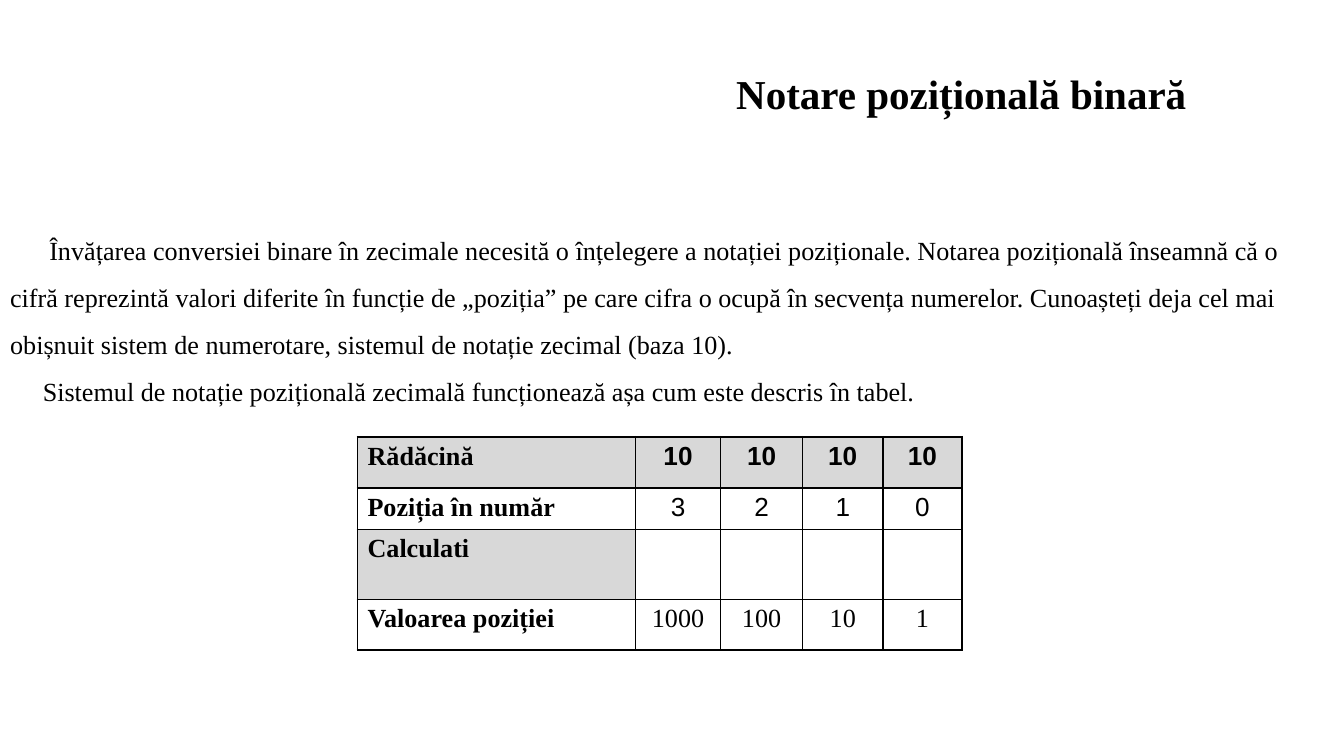
from dataclasses import dataclass

from lxml import etree
from pptx import Presentation
from pptx import util as u
from pptx.dml.color import RGBColor
from pptx.enum import text
from pptx.oxml.ns import qn


@dataclass(frozen=True)
class Theme:
    ink: str = "000000"
    shade: str = "D8D8D8"
    serif: str = "Times New Roman"
    sans: str = "Arial"
    title_size: float = 22
    body_size: float = 14
    border: float = 1
    margin_x: float = 5.4
    margin_y: float = 2.7


class SlideBuilder:
    def __init__(self, slide, theme):
        self.slide = slide
        self.theme = theme

    def set_margins(self, holder):
        holder.margin_left = holder.margin_right = u.Pt(self.theme.margin_x)
        holder.margin_top = holder.margin_bottom = u.Pt(self.theme.margin_y)

    def style_font(self, font, size, name, bold):
        font.size, font.name, font.bold = u.Pt(size), name, bold
        font.color.rgb = RGBColor.from_string(self.theme.ink)

    def add_words(self, paragraph, words, size, name, bold=False):
        run = paragraph.add_run()
        run.text = words
        self.style_font(run.font, size, name, bold)

    def text_frame(self, left, top, width, height):
        box = self.slide.shapes.add_textbox(*map(u.Pt, (left, top, width, height)))
        frame = box.text_frame
        frame.word_wrap = True
        self.set_margins(frame)
        return frame

    def title(self, words, *box):
        frame = self.text_frame(*box)
        frame.vertical_anchor = text.MSO_ANCHOR.MIDDLE
        paragraph = frame.paragraphs[0]
        paragraph.alignment = text.PP_ALIGN.CENTER
        self.add_words(paragraph, words, self.theme.title_size, self.theme.serif, True)

    def body(self, passages, *box):
        frame = self.text_frame(*box)
        for index, (indent, words) in enumerate(passages):
            paragraph = frame.add_paragraph() if index else frame.paragraphs[0]
            paragraph.line_spacing = 1.5
            paragraph._p.get_or_add_pPr().set("indent", str(u.Pt(indent)))
            self.add_words(paragraph, words, self.theme.body_size, self.theme.serif)

    def cell_borders(self, cell):
        properties = cell._tc.get_or_add_tcPr()
        for side in ("lnL", "lnR", "lnT", "lnB"):
            line = etree.SubElement(properties, qn(f"a:{side}"), w=str(u.Pt(self.theme.border)))
            fill = etree.SubElement(line, qn("a:solidFill"))
            etree.SubElement(fill, qn("a:srgbClr"), val=self.theme.ink)

    def cell(self, cell, words, font_name, bold, shaded, centred):
        self.set_margins(cell)
        self.cell_borders(cell)
        if shaded:
            cell.fill.solid()
            cell.fill.fore_color.rgb = RGBColor.from_string(self.theme.shade)
        else:
            cell.fill.background()
        paragraph = cell.text_frame.paragraphs[0]
        if centred:
            paragraph.alignment = text.PP_ALIGN.CENTER
        if words:
            self.add_words(paragraph, words, self.theme.body_size, font_name, bold)
        else:
            self.style_font(paragraph.font, self.theme.body_size, font_name, bold)

    def table(self, rows, left, top, widths, heights):
        size = (left, top, sum(widths), sum(heights))
        table = self.slide.shapes.add_table(len(rows), len(widths), *map(u.Pt, size)).table
        table.first_row = table.horz_banding = False
        for column, width in zip(table.columns, widths):
            column.width = u.Pt(width)
        for row, height in zip(table.rows, heights):
            row.height = u.Pt(height)
        for r, (label, values, value_font) in enumerate(rows):
            for c, words in enumerate((label, *values)):
                is_label = c == 0
                self.cell(
                    table.cell(r, c), words,
                    font_name=self.theme.serif if is_label else value_font,
                    bold=is_label or r == 0,
                    shaded=r == 0 or (is_label and r == 2),
                    centred=not is_label,
                )


def main():
    presentation = Presentation()
    presentation.slide_width, presentation.slide_height = u.Pt(720), u.Pt(405)
    theme = Theme()
    builder = SlideBuilder(presentation.slides.add_slide(presentation.slide_layouts[6]), theme)

    # Heading
    builder.title("Notare pozițională binară", 389, 34.5, 252, 31)

    # Explanation: first-line indent and wording of each paragraph
    builder.body([
        (21, "Învățarea conversiei binare în zecimale necesită o înțelegere a notației "
             "poziționale. Notarea pozițională înseamnă că o cifră reprezintă valori diferite "
             "în funcție de „poziția” pe care cifra o ocupă în secvența numerelor. Cunoașteți "
             "deja cel mai obișnuit sistem de numerotare, sistemul de notație zecimal (baza 10)."),
        (17.5, "Sistemul de notație pozițională zecimală funcționează așa cum este descris în tabel."),
    ], 0, 114.5, 707, 104)

    # Place-value table
    builder.table([
        ("Rădăcină", ["10"] * 4, theme.sans),
        ("Poziția în număr", ["3", "2", "1", "0"], theme.sans),
        ("Calculati", [""] * 4, theme.serif),
        ("Valoarea poziției", ["1000", "100", "10", "1"], theme.serif),
    ], 191.5, 234, widths=[149, 45.5, 44, 43, 42.5], heights=[27.4, 21.6, 37.6, 27.2])

    presentation.save("out.pptx")


if __name__ == "__main__":
    main()
